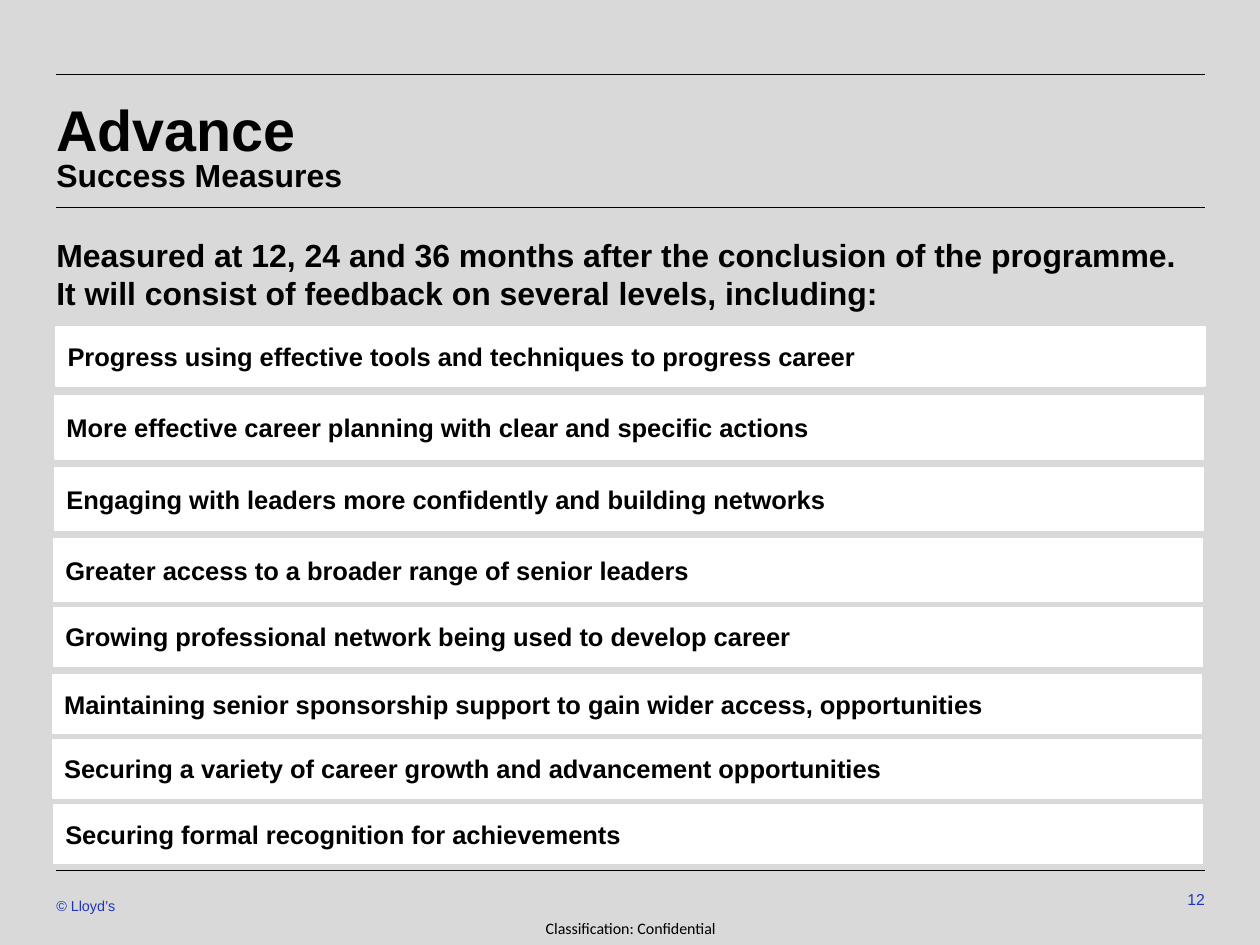
import dataclasses

import pptx
import pptx.dml.color
import pptx.enum.shapes
import pptx.enum.text
import pptx.oxml.ns
import pptx.util
from lxml import etree

Inches = pptx.util.Inches
Pt = pptx.util.Pt
Align = pptx.enum.text.PP_ALIGN
Anchor = pptx.enum.text.MSO_ANCHOR


@dataclasses.dataclass(frozen=True)
class Theme:
    background: str = "D9D9D9"
    ink: str = "000000"
    bar: str = "FFFFFF"
    footer: str = "1E35BF"
    font: str = "Arial"
    label_font: str = "Calibri"
    title_size: float = 36
    heading_size: float = 20
    bar_size: float = 16
    number_size: float = 9.9
    label_size: float = 10
    copyright_size: float = 9


THEME = Theme()

# Offset from the left of the list, offset from its top, height, wording
MEASURES = [
    (0.03, 0.00, 0.51, "Progress using effective tools and techniques to progress career"),
    (0.02, 0.60, 0.55, "More effective career planning with clear and specific actions"),
    (0.02, 1.22, 0.55, "Engaging with leaders more confidently and building networks"),
    (0.01, 1.84, 0.55, "Greater access to a broader range of senior leaders"),
    (0.01, 2.44, 0.51, "Growing professional network being used to develop career"),
    (0.00, 3.03, 0.51, "Maintaining senior sponsorship support to gain wider access, opportunities"),
    (0.00, 3.59, 0.51, "Securing a variety of career growth and advancement opportunities"),
    (0.01, 4.16, 0.51, "Securing formal recognition for achievements"),
]


def color(value):
    return pptx.dml.color.RGBColor.from_string(value)


def set_text(shape, text, size, ink=THEME.ink, font=THEME.font, bold=False,
             align=Align.LEFT, anchor=Anchor.MIDDLE):
    frame = shape.text_frame
    frame.word_wrap = True
    frame.vertical_anchor = anchor
    para = frame.paragraphs[0]
    para.text = text
    para.alignment = align
    para.font.name = font
    para.font.size = Pt(size)
    para.font.bold = bold
    para.font.color.rgb = color(ink)
    return para


def add_text(page, left, top, width, height, text, size, inset_top=0, inset_bottom=0, **style):
    box = page.shapes.add_textbox(Inches(left), Inches(top), Inches(width), Inches(height))
    frame = box.text_frame
    frame.margin_left = frame.margin_right = 0
    frame.margin_top = Inches(inset_top)
    frame.margin_bottom = Inches(inset_bottom)
    return set_text(box, text, size, **style)


def add_rule(page, left, top, width):
    """Draw a thin horizontal line."""
    rule = page.shapes.add_connector(
        pptx.enum.shapes.MSO_CONNECTOR.STRAIGHT,
        Inches(left), Inches(top), Inches(left + width), Inches(top))
    rule.line.color.rgb = color(THEME.ink)
    rule.line.width = Pt(0.5)
    etree.SubElement(rule._element.spPr, pptx.oxml.ns.qn("a:effectLst"))


def add_header(page, left, top, width, height):
    add_rule(page, left, top, width)
    add_rule(page, left, top + height, width)
    title = add_text(page, left, top, width, height, "Advance", THEME.title_size,
                     inset_top=0.24, inset_bottom=0.08, bold=True, anchor=Anchor.TOP)
    title.line_spacing = 0.9
    add_text(page, left, top + 0.66, width, 0.51, "Success Measures", THEME.heading_size,
             inset_top=0.05, bold=True, anchor=Anchor.TOP)


def add_introduction(page, left, top, width, height):
    para = add_text(
        page, left, top, width, height,
        "Measured at 12, 24 and 36 months after the conclusion of the programme. "
        "It will consist of feedback on several levels, including:",
        THEME.heading_size, bold=True, anchor=Anchor.TOP)
    para.line_spacing = Pt(24)


def add_measures(page, left, top, width):
    for shift, drop, height, text in MEASURES:
        bar = page.shapes.add_shape(
            pptx.enum.shapes.MSO_SHAPE.RECTANGLE,
            Inches(left + shift), Inches(top + drop), Inches(width), Inches(height))
        bar.shadow.inherit = False
        bar.fill.solid()
        bar.fill.fore_color.rgb = color(THEME.bar)
        bar.line.color.rgb = color(THEME.bar)
        bar.line.width = Pt(1)
        set_text(bar, text, THEME.bar_size, bold=True)


def add_footer(page, left, top, width):
    add_rule(page, left, top, width)
    add_text(page, left, top + 0.18, 3.7, 0.25, "© Lloyd’s", THEME.copyright_size,
             ink=THEME.footer)
    add_text(page, left + width - 2.47, top + 0.1, 2.47, 0.3, "12", THEME.number_size,
             ink=THEME.footer, align=Align.RIGHT)
    add_text(page, left + (width - 1.82) / 2, top + 0.36, 1.82, 0.29,
             "Classification: Confidential", THEME.label_size,
             font=THEME.label_font, align=Align.CENTER)


def add_success_page(deck):
    page = deck.slides.add_slide(deck.slide_layouts[6])
    page.background.fill.solid()
    page.background.fill.fore_color.rgb = color(THEME.background)
    left, width = 0.49, 10
    add_header(page, left, 0.65, width, 1.16)
    add_introduction(page, left, 2.05, width, 0.7)
    add_measures(page, left - 0.03, 2.85, width)
    add_footer(page, left, 7.58, width)


def main():
    deck = pptx.Presentation()
    deck.slide_width = Inches(10.97)
    deck.slide_height = Inches(8.23)
    add_success_page(deck)
    deck.save("out.pptx")


if __name__ == "__main__":
    main()
